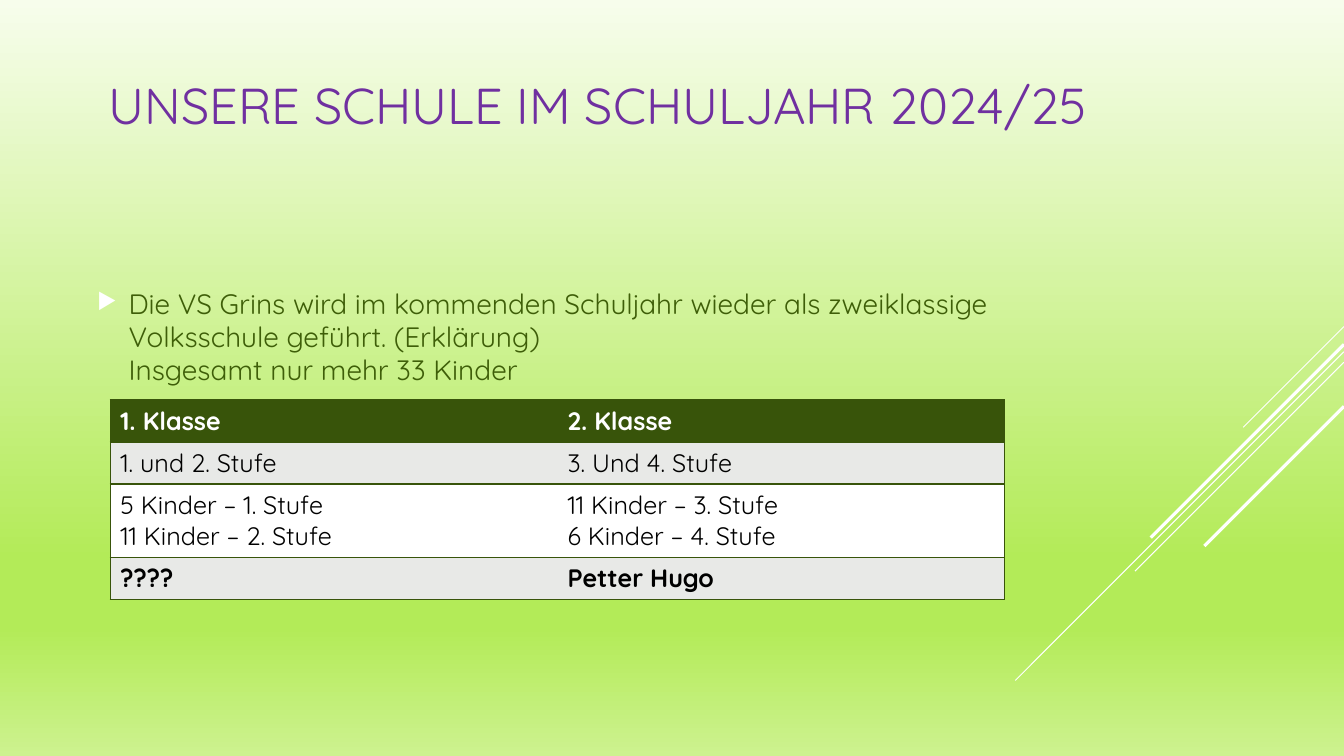
from dataclasses import dataclass

import lxml.etree
import pptx
import pptx.dml.color
import pptx.enum.shapes
import pptx.enum.text
import pptx.oxml.ns
import pptx.util

EMU_PER_PX = 9525
SLIDE_WIDTH, SLIDE_HEIGHT = 1280, 720
qn = pptx.oxml.ns.qn


@dataclass(frozen=True)
class Theme:
    font: str = "Quicksand"
    title: str = "7030A0"
    body: str = "3E5E08"
    white: str = "FFFFFF"
    black: str = "000000"
    header: str = "38540A"
    band: str = "E8E9E7"
    title_size: int = 36
    body_size: int = 20
    table_size: int = 18
    background: tuple = ((0, "F7FDEC"), (74, "B3EB58"), (83, "B3EB58"), (100, "CDF28F"))


@dataclass(frozen=True)
class TextBlock:
    text: str
    left: int
    top: int
    width: int
    height: int
    size: int
    color: str
    anchor: pptx.enum.text.MSO_ANCHOR
    margin_top: int = 5


@dataclass(frozen=True)
class Ray:
    start_y: int
    reach: int
    weight: float


@dataclass(frozen=True)
class TableRow:
    texts: tuple
    height: int
    fill: str
    color: str
    bold: bool


THEME = Theme()

RAYS = (
    Ray(311, 96, 0.75),
    Ray(335, 313, 0.75),
    Ray(345, 199, 0.75),
    Ray(328, 184, 2.25),
    Ray(387, 133, 2.25),
)

TITLE = TextBlock(
    "UNSERE SCHULE IM SCHULJAHR 2024/25", 94, 20, 1063, 158,
    THEME.title_size, THEME.title, pptx.enum.text.MSO_ANCHOR.MIDDLE,
)
BODY = TextBlock(
    "Die VS Grins wird im kommenden Schuljahr wieder als zweiklassige "
    "Volksschule geführt. (Erklärung)\vInsgesamt nur mehr 33 Kinder",
    83, 156, 896, 523, THEME.body_size, THEME.body,
    pptx.enum.text.MSO_ANCHOR.TOP, margin_top=119,
)

TABLE_LEFT, TABLE_TOP, COLUMN_WIDTH = 105, 381, 426
TABLE_ROWS = (
    TableRow(("1. Klasse", "2. Klasse"), 40, THEME.header, THEME.white, True),
    TableRow(("1. und 2. Stufe", "3. Und 4. Stufe"), 40, THEME.band, THEME.black, False),
    TableRow(
        ("5 Kinder – 1. Stufe\n11 Kinder – 2. Stufe", "11 Kinder – 3. Stufe\v6 Kinder – 4. Stufe"),
        70, THEME.white, THEME.black, False,
    ),
    TableRow(("????", "Petter Hugo"), 40, THEME.band, THEME.black, True),
)


def px(value: int) -> pptx.util.Emu:
    return pptx.util.Emu(value * EMU_PER_PX)


def rgb(color: str) -> pptx.dml.color.RGBColor:
    return pptx.dml.color.RGBColor.from_string(color)


def add_child(parent, tag: str, **attributes: str):
    return lxml.etree.SubElement(parent, qn(tag), attributes)


def format_runs(text_frame, size: int, color: str, bold: bool = False) -> None:
    for paragraph in text_frame.paragraphs:
        for run in paragraph.runs:
            run.font.name = THEME.font
            run.font.size = pptx.util.Pt(size)
            run.font.bold = bold
            run.font.color.rgb = rgb(color)


def paint_background(slide) -> None:
    fill = slide.background.fill
    fill.gradient()
    fill.gradient_angle = 270
    stops = next(slide.element.iter(qn("a:gsLst")))
    for stop in list(stops):
        stops.remove(stop)
    for position, color in THEME.background:
        stop = add_child(stops, "a:gs", pos=str(position * 1000))
        add_child(stop, "a:srgbClr", val=color)


def draw_ray(slide, ray: Ray) -> None:
    connector = slide.shapes.add_connector(
        pptx.enum.shapes.MSO_CONNECTOR.STRAIGHT,
        px(SLIDE_WIDTH), px(ray.start_y),
        px(SLIDE_WIDTH - ray.reach), px(ray.start_y + ray.reach),
    )
    connector.line.color.rgb = rgb(THEME.white)
    connector.line.width = pptx.util.Pt(ray.weight)
    add_child(connector.element.spPr, "a:effectLst")


def draw_text(slide, block: TextBlock):
    shape = slide.shapes.add_textbox(
        px(block.left), px(block.top), px(block.width), px(block.height)
    )
    text_frame = shape.text_frame
    text_frame.word_wrap = True
    text_frame.vertical_anchor = block.anchor
    text_frame.margin_top = px(block.margin_top)
    text_frame.text = block.text
    format_runs(text_frame, block.size, block.color)
    return shape


def add_bullet(paragraph) -> None:
    paragraph.line_spacing = 0.97
    properties = paragraph._p.get_or_add_pPr()
    properties.set("marL", str(px(30)))
    properties.set("indent", str(px(-30)))
    bullet_color = add_child(properties, "a:buClr")
    add_child(bullet_color, "a:srgbClr", val=THEME.white)
    add_child(properties, "a:buSzPct", val="80000")
    add_child(properties, "a:buChar", char="▶")


def set_borders(cell, visible: dict[str, bool]) -> None:
    properties = cell._tc.get_or_add_tcPr()
    for index, (side, shown) in enumerate(visible.items()):
        border = lxml.etree.Element(qn(f"a:ln{side}"), w=str(pptx.util.Pt(1)))
        if shown:
            fill = add_child(border, "a:solidFill")
            add_child(fill, "a:srgbClr", val=THEME.header)
        else:
            add_child(border, "a:noFill")
        properties.insert(index, border)


def draw_table(slide) -> None:
    column_count = len(TABLE_ROWS[0].texts)
    table = slide.shapes.add_table(
        len(TABLE_ROWS), column_count, px(TABLE_LEFT), px(TABLE_TOP),
        px(COLUMN_WIDTH * column_count), px(sum(row.height for row in TABLE_ROWS)),
    ).table
    for column in table.columns:
        column.width = px(COLUMN_WIDTH)
    for row_index, row in enumerate(TABLE_ROWS):
        table.rows[row_index].height = px(row.height)
        for column_index, text in enumerate(row.texts):
            cell = table.cell(row_index, column_index)
            cell.text = text
            cell.fill.solid()
            cell.fill.fore_color.rgb = rgb(row.fill)
            format_runs(cell.text_frame, THEME.table_size, row.color, row.bold)
            set_borders(cell, {
                "L": column_index == 0,
                "R": column_index == column_count - 1,
                "T": True,
                "B": True,
            })


def main() -> None:
    presentation = pptx.Presentation()
    presentation.slide_width = px(SLIDE_WIDTH)
    presentation.slide_height = px(SLIDE_HEIGHT)
    slide = presentation.slides.add_slide(presentation.slide_layouts[6])
    paint_background(slide)
    for ray in RAYS:
        draw_ray(slide, ray)
    draw_text(slide, TITLE)
    body = draw_text(slide, BODY)
    add_bullet(body.text_frame.paragraphs[0])
    draw_table(slide)
    presentation.save("out.pptx")


if __name__ == "__main__":
    main()
